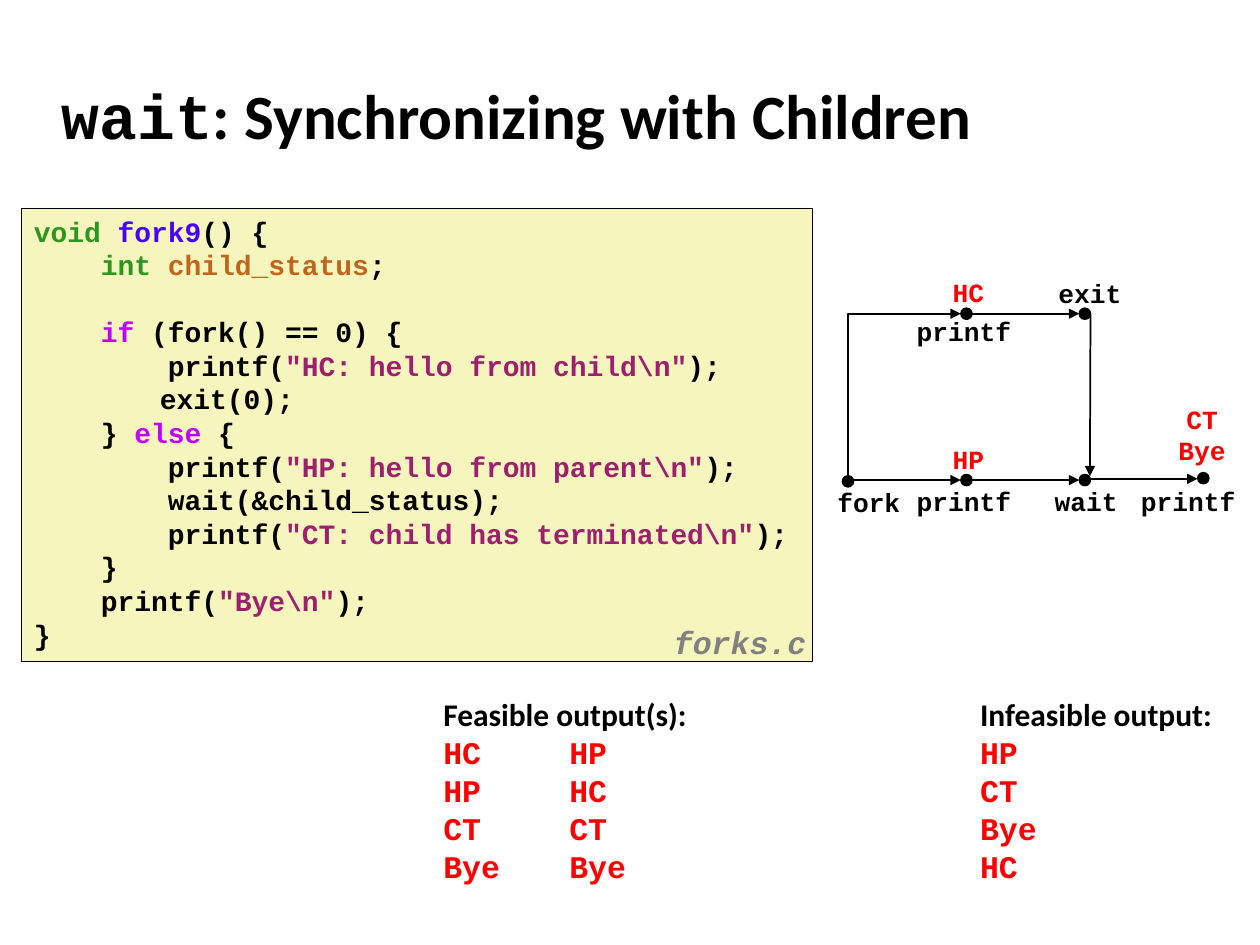
from pptx import Presentation
from pptx.dml.color import RGBColor
from pptx.enum.shapes import MSO_CONNECTOR, MSO_SHAPE
from pptx.enum.text import MSO_ANCHOR, MSO_AUTO_SIZE, PP_ALIGN
from pptx.oxml.ns import qn
from pptx.util import Inches, Pt
from lxml import etree

LEFT, CENTER = PP_ALIGN.LEFT, PP_ALIGN.CENTER
TOP, MIDDLE = MSO_ANCHOR.TOP, MSO_ANCHOR.MIDDLE
GROW, FIXED = MSO_AUTO_SIZE.SHAPE_TO_FIT_TEXT, MSO_AUTO_SIZE.NONE
STRAIGHT, ELBOW = MSO_CONNECTOR.STRAIGHT, MSO_CONNECTOR.ELBOW

THEME = {
    "heading": "Calibri", "code": "Courier New",
    "title size": 36, "output size": 18, "code size": 16, "label size": 15,
    "text": "000000", "type": "2D961E", "function": "4A00FF",
    "variable": "C1651C", "keyword": "C200FF", "string": "9D206F",
    "output": "FF0000", "file": "808080", "panel": "F6F5BD",
}

presentation = Presentation()
presentation.slide_width, presentation.slide_height = Inches(10), Inches(7.5)
slide = presentation.slides.add_slide(presentation.slide_layouts[5])
shapes = slide.shapes
CELL = presentation.slide_width / 100  # the slide is 100 columns by 75 rows


def cells(*counts):
    return [round(count * CELL) for count in counts]


def write(shape, lines, size, align=LEFT, wrap=False, autosize=GROW, anchor=TOP):
    """Fill a shape with lines, each a list of (text, colour name[, font name])."""
    frame = shape.text_frame
    frame.word_wrap, frame.auto_size, frame.vertical_anchor = wrap, autosize, anchor
    for number, line in enumerate(lines):
        paragraph = frame.add_paragraph() if number else frame.paragraphs[0]
        paragraph.alignment = align
        paragraph._p.get_or_add_pPr().set("defTabSz", str(Inches(1)))
        for text, colour, *font in line:
            run = paragraph.add_run()
            run.text = text
            run.font.name = THEME[font[0] if font else "code"]
            run.font.size, run.font.bold = Pt(THEME[size]), True
            run.font.color.rgb = RGBColor.from_string(THEME[colour])
        if not line:
            end = paragraph._p.get_or_add_endParaRPr()
            end.set("sz", str(THEME[size] * 100))
            end.set("b", "1")
            etree.SubElement(end, qn("a:latin"), typeface=THEME["code"])


# Title
title = shapes.title
title.left, title.top, title.width, title.height = cells(3.9, 4.9, 83, 8.3)
write(title, [[("wait", "text"), (": Synchronizing with Children", "text", "heading")]],
      "title size", wrap=True, autosize=FIXED, anchor=MIDDLE)

# Code panel
code = [
    [("void ", "type"), ("fork9", "function"), ("() {", "text")],
    [("    int ", "type"), ("child_status", "variable"), (";", "text")],
    [],
    [("    if", "keyword"), (" (fork() == 0) {", "text")],
    [("        printf(", "text"), ('"HC: hello from child\\n"', "string"), (");", "text")],
    [("\texit(0);", "text")],
    [("    } ", "text"), ("else", "keyword"), (" {", "text")],
    [("        printf(", "text"), ('"HP: hello from parent\\n"', "string"), (");", "text")],
    [("        wait(&child_status);", "text")],
    [("        printf(", "text"), ('"CT: child has terminated\\n"', "string"), (");", "text")],
    [("    }", "text")],
    [("    printf(", "text"), ('"Bye\\n"', "string"), (");", "text")],
    [("}", "text")],
]
panel = shapes.add_shape(MSO_SHAPE.RECTANGLE, *cells(1.7, 16.5, 62.8, 36))
panel.shadow.inherit = False
panel.fill.solid()
panel.fill.fore_color.rgb = RGBColor.from_string(THEME["panel"])
panel.line.color.rgb = RGBColor.from_string(THEME["text"])
panel.line.width = Pt(0.25)
write(panel, code, "code size")

# Process graph: four event columns, child row above parent row
DOT = 0.9
fork_x, print_x, wait_x, last_x = [67.3 + 9.4 * column for column in range(4)]
child_y, parent_y = 24.9, 38.1

for x, y in [(fork_x, parent_y + 0.1), (print_x, parent_y), (wait_x, parent_y),
             (last_x, parent_y - 0.15), (print_x, child_y), (wait_x, child_y)]:
    dot = shapes.add_shape(MSO_SHAPE.OVAL, *cells(x - DOT / 2, y - DOT / 2, DOT, DOT))
    dot.shadow.inherit = False
    dot.fill.solid()
    dot.fill.fore_color.rgb = RGBColor.from_string(THEME["text"])
    dot.line.color.rgb = RGBColor.from_string(THEME["text"])
    dot.line.width = Pt(0.75)

# The elbow runs up and then right, so its frame is turned a quarter about its centre
run_length, rise = print_x - DOT / 2 - fork_x, parent_y - child_y
middle_x, middle_y = fork_x + run_length / 2, child_y + rise / 2
arrows = [(ELBOW, middle_x + rise / 2, middle_y + run_length / 2,
           middle_x - rise / 2, middle_y - run_length / 2)]
for start, end, y in [(fork_x, print_x, parent_y), (print_x, wait_x, parent_y),
                      (wait_x, last_x, parent_y - 0.1), (print_x, wait_x, child_y)]:
    arrows.append((STRAIGHT, start + DOT / 2, y, end - DOT / 2, y))
arrows.append((STRAIGHT, wait_x + 0.45, child_y, wait_x + 0.4, parent_y - 0.3))

for kind, *ends in arrows:
    arrow = shapes.add_connector(kind, *cells(*ends))
    arrow.line.color.rgb = RGBColor.from_string(THEME["text"])
    arrow.line.width = Pt(1)
    properties = arrow._element.spPr
    etree.SubElement(properties.find(qn("a:ln")), qn("a:tailEnd"), type="triangle")
    etree.SubElement(properties, qn("a:effectLst"))
    if kind == ELBOW:
        properties.find(qn("a:xfrm")).set("rot", "5400000")
        properties.find(qn("a:prstGeom")).set("prst", "bentConnector2")

for words, colour, center, top, width, height in [
    (["fork"], "text", 68.95, 38.1, 8.1, 3.5),
    (["printf"], "text", 76.5, 38, 10, 3.5),
    (["wait"], "text", 86.2, 38, 9.6, 3.5),
    (["printf"], "text", 94.3, 38, 10, 3.5),
    (["printf"], "text", 76.5, 24.5, 10, 3.5),
    (["exit"], "text", 86.5, 21.5, 9.6, 3.5),
    (["HP"], "output", 76.85, 34.7, 4.5, 3.5),
    (["HC"], "output", 76.85, 21.4, 4.5, 3.5),
    (["CT", "Bye"], "output", 95.4, 31.5, 5.8, 6.1),
]:
    label = shapes.add_textbox(*cells(center - width / 2, top, width, height))
    write(label, [[(word, colour)] for word in words], "label size",
          align=CENTER, wrap=colour == "text")

# File name in the corner of the code panel
file_name = shapes.add_textbox(*cells(52.5, 49.2, 13.2, 3.9))
write(file_name, [[("forks.c", "file")]], "output size")
file_name.text_frame.paragraphs[0].line_spacing = 0.94
file_name.text_frame.paragraphs[0].runs[0].font.italic = True

# Output lists
for heading, outputs, left, width, wrap in [
    ("Feasible output(s):", ["HC\tHP", "HP\tHC", "CT\tCT", "Bye\tBye"], 34.2, 30, True),
    ("Infeasible output:", ["HP", "CT", "Bye", "HC"], 76.8, 20.7, False),
]:
    listing = shapes.add_textbox(*cells(left, 54.7, width, 16.2))
    write(listing, [[(heading, "text", "heading")]] + [[(line, "output")] for line in outputs],
          "output size", wrap=wrap)

presentation.save("out.pptx")
